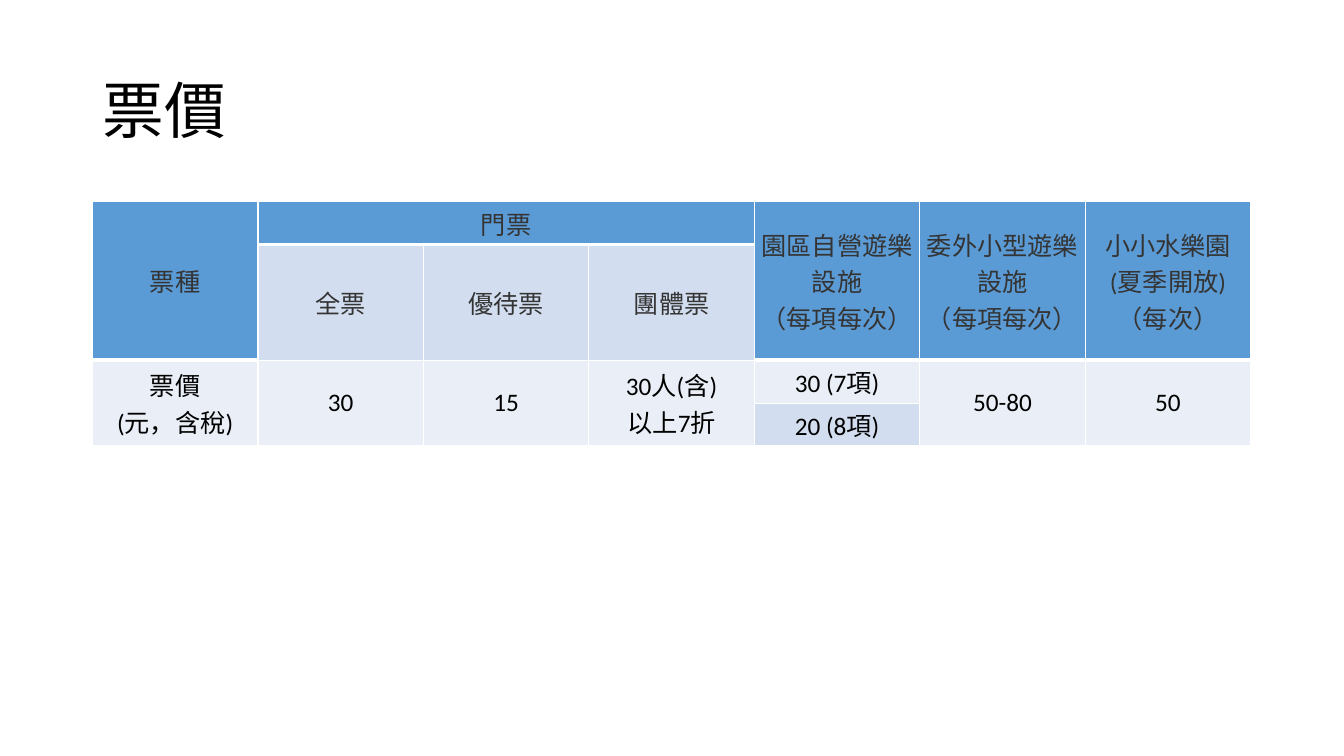
from lxml import etree
from pptx import Presentation
from pptx.dml.color import RGBColor
from pptx.enum import text
from pptx.oxml import ns
from pptx.util import Cm, Pt

COLORS = {
    "black": "000000",
    "header_text": "343434",
    "header": "5B9BD5",
    "band": "D2DEEF",
    "light": "EAEFF7",
    "border": "FFFFFF",
}
FONT = "Calibri"
COLUMN_WIDTH = Cm(4.17)
ROW_HEIGHTS = [Cm(1.04), Cm(1.04), Cm(0.84), Cm(0.84)]

# row, column, rows spanned, columns spanned, wording
HEADERS = [
    (0, 0, 2, 1, "票種"),
    (0, 1, 1, 3, "門票"),
    (0, 4, 2, 1, "園區自營遊樂設施\n（每項每次）"),
    (0, 5, 2, 1, "委外小型遊樂設施\n（每項每次）"),
    (0, 6, 2, 1, "小小水樂園\n(夏季開放)\n（每次）"),
]
TICKET_TYPES = [
    (1, 1, 1, 1, "全票"),
    (1, 2, 1, 1, "優待票"),
    (1, 3, 1, 1, "團體票"),
]
PRICES = [
    (2, 0, 2, 1, "票價\n(元，含稅)"),
    (2, 1, 2, 1, "30"),
    (2, 2, 2, 1, "15"),
    (2, 3, 2, 1, "30人(含)\n以上7折"),
    (2, 4, 1, 1, "30 (7項)"),
    (2, 5, 2, 1, "50-80"),
    (2, 6, 2, 1, "50"),
]
SECOND_PRICES = [(3, 4, 1, 1, "20 (8項)")]


def set_font(para, size, color):
    para.font.name = FONT
    para.font.size = Pt(size)
    para.font.color.rgb = RGBColor.from_string(COLORS[color])


def add_title(page, wording):
    title = page.shapes.title
    title.left, title.top = Cm(2.33), Cm(1.01)
    title.width, title.height = Cm(29.21), Cm(3.68)
    title.text_frame.vertical_anchor = text.MSO_ANCHOR.MIDDLE
    para = title.text_frame.paragraphs[0]
    para.text = wording
    para.alignment = text.PP_ALIGN.LEFT
    para.line_spacing = 0.9
    set_font(para, 44, "black")


def set_borders(cell, bottom):
    properties = cell._tc.get_or_add_tcPr()
    for side, width in (("L", 1), ("R", 1), ("T", 1), ("B", bottom)):
        line = etree.SubElement(properties, ns.qn(f"a:ln{side}"), w=str(Pt(width)))
        fill = etree.SubElement(line, ns.qn("a:solidFill"))
        etree.SubElement(fill, ns.qn("a:srgbClr"), val=COLORS["border"])


def fill_cells(table, entries, fill, color, bottom=1):
    for row, column, rows, columns, wording in entries:
        cell = table.cell(row, column)
        if rows * columns > 1:
            cell.merge(table.cell(row + rows - 1, column + columns - 1))
        set_borders(cell, bottom)
        cell.fill.solid()
        cell.fill.fore_color.rgb = RGBColor.from_string(COLORS[fill])
        cell.vertical_anchor = text.MSO_ANCHOR.MIDDLE
        cell.margin_left = cell.margin_right = Cm(0.08)
        cell.margin_top = cell.margin_bottom = Cm(0.08)
        para = cell.text_frame.paragraphs[0]
        para.text = wording
        para.alignment = text.PP_ALIGN.CENTER
        set_font(para, 18, color)


def add_price_table(page):
    frame = page.shapes.add_table(4, 7, Cm(2.33), Cm(5.08), 7 * COLUMN_WIDTH, Cm(4.29))
    table = frame.table
    table.first_row = table.horz_banding = False
    for column in table.columns:
        column.width = COLUMN_WIDTH
    for row, height in zip(table.rows, ROW_HEIGHTS):
        row.height = height
    frame.height = Cm(4.29)
    fill_cells(table, HEADERS, "header", "header_text", bottom=3)
    fill_cells(table, TICKET_TYPES, "band", "header_text")
    fill_cells(table, PRICES, "light", "black")
    fill_cells(table, SECOND_PRICES, "band", "black")


def main():
    deck = Presentation()
    deck.slide_width, deck.slide_height = Cm(33.87), Cm(19.05)
    page = deck.slides.add_slide(deck.slide_layouts.get_by_name("Title Only"))
    add_title(page, "票價")
    add_price_table(page)
    deck.save("out.pptx")


if __name__ == "__main__":
    main()
